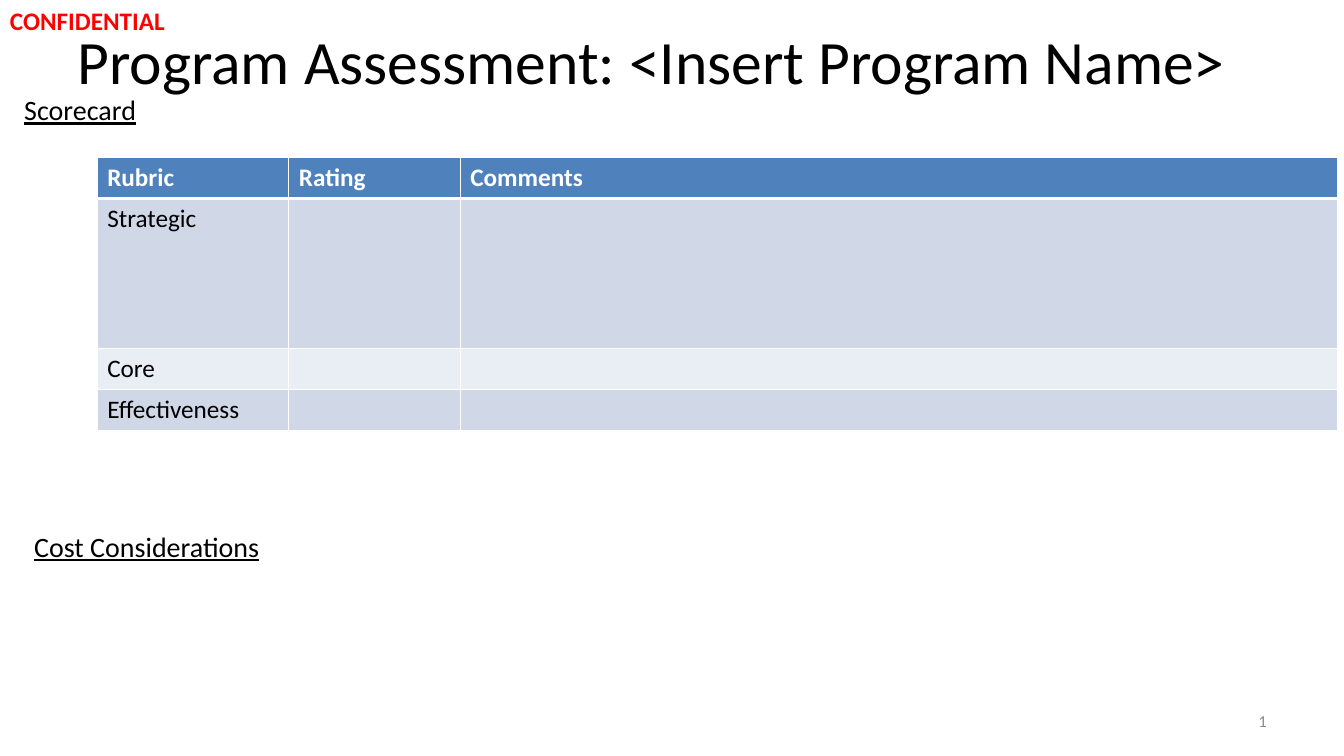
from pptx import Presentation
from pptx import util as u
from pptx.dml.color import RGBColor
from pptx.enum import text
from pptx.oxml import ns
from lxml import etree

COLORS = {
    "ink": "000000", "white": "FFFFFF", "alert": "FF0000", "muted": "8C8C8C",
    "header": "4F81BD", "band": "D0D8E8", "light": "E9EDF4",
}


def write(frame, words, size=18, color="ink", bold=False, underline=False,
          align=text.PP_ALIGN.LEFT, anchor=text.MSO_ANCHOR.TOP, wrap=True):
    frame.word_wrap = wrap
    frame.vertical_anchor = anchor
    para = frame.paragraphs[0]
    para.alignment = align
    span = para.add_run()
    span.text = words
    span.font.name = "Calibri"
    span.font.size = u.Pt(size)
    span.font.bold = bold
    span.font.underline = underline
    span.font.color.rgb = RGBColor.from_string(COLORS[color])
    return span


def add_border(cell, side, points):
    props = cell._tc.get_or_add_tcPr()
    line = etree.SubElement(props, ns.qn(f"a:ln{side}"), w=str(u.Pt(points)))
    fill = etree.SubElement(line, ns.qn("a:solidFill"))
    etree.SubElement(fill, ns.qn("a:srgbClr"), val=COLORS["white"])


deck = Presentation()
deck.slide_width, deck.slide_height = u.Cm(33.87), u.Cm(19.05)
page = deck.slides.add_slide(deck.slide_layouts[5])

# Title
title = page.shapes.title
title.left, title.top = u.Cm(1.7), u.Cm(-0.08)
title.width, title.height = u.Cm(30.48), u.Cm(3.18)
title.text_frame.auto_size = text.MSO_AUTO_SIZE.NONE
write(title.text_frame, "Program Assessment: <Insert Program Name>", size=44,
      anchor=text.MSO_ANCHOR.MIDDLE)

# Confidentiality mark, section headings and page number
heading = {"size": 20, "underline": True}
labels = [
    ("CONFIDENTIAL", (0, 0, 4.45, 1.02),
     {"color": "alert", "bold": True, "wrap": False}),
    ("Scorecard", (0.36, 2.21, 9.47, 1.5), heading),
    ("Cost Considerations", (0.61, 13.21, 6.25, 1.12), {**heading, "wrap": False}),
    ("1", (24.28, 17.65, 7.9, 1.02),
     {"size": 12, "color": "muted", "align": text.PP_ALIGN.RIGHT,
      "anchor": text.MSO_ANCHOR.MIDDLE}),
]
for words, place, style in labels:
    box = page.shapes.add_textbox(*map(u.Cm, place))
    span = write(box.text_frame, words, **style)

# The last label is a live slide number
field = span._r
field.tag = ns.qn("a:fld")
field.set("id", "{B6F15528-21DE-4FAA-801E-634DDDAF4B2B}")
field.set("type", "slidenum")

# Scorecard table
rows = [("Rubric", "Rating", "Comments"), ("Strategic", "", ""),
        ("Core", "", ""), ("Effectiveness", "", "")]
widths = [4.83, 4.32, 22.1]
heights = [1.03, 3.78, 1.03, 1.03]
scorecard = page.shapes.add_table(
    len(rows), len(widths), u.Cm(2.45), u.Cm(3.97),
    u.Cm(sum(widths)), u.Cm(sum(heights))).table
for column, width in zip(scorecard.columns, widths):
    column.width = u.Cm(width)
for row, height in zip(scorecard.rows, heights):
    row.height = u.Cm(height)

for r, row in enumerate(rows):
    is_header = r == 0
    fill = "header" if is_header else ("band" if r % 2 else "light")
    for c, words in enumerate(row):
        cell = scorecard.cell(r, c)
        for side in "LRTB":
            under_header = (r, side) in [(0, "B"), (1, "T")]
            add_border(cell, side, 3 if under_header else 1)
        cell.fill.solid()
        cell.fill.fore_color.rgb = RGBColor.from_string(COLORS[fill])
        if words:
            write(cell.text_frame, words, bold=is_header,
                  color="white" if is_header else "ink")

deck.save("out.pptx")
